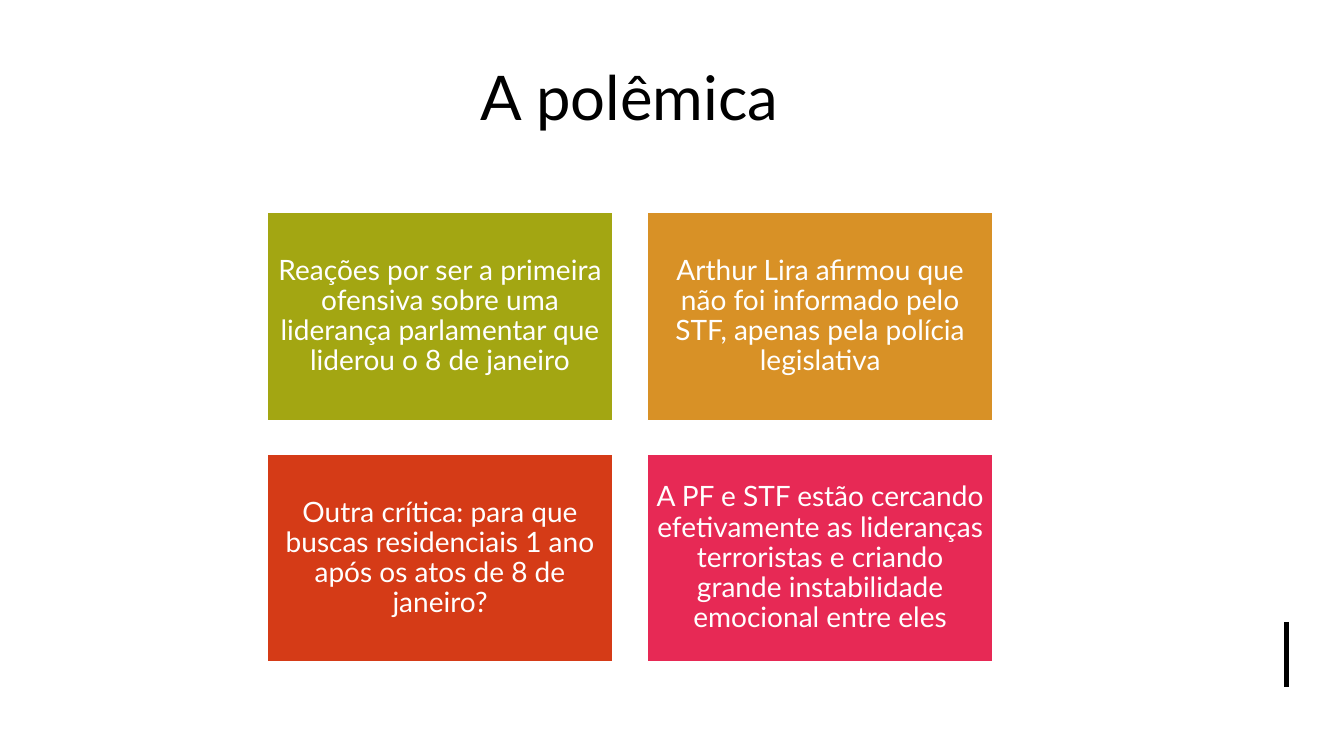
"""Builds the slide "A polêmica": a title above a two-by-two grid of tiles."""
from dataclasses import dataclass

from lxml import etree
from pptx import Presentation
from pptx import util as u
from pptx.dml.color import RGBColor
from pptx.enum import shapes, text
from pptx.oxml.ns import qn

EMU_PER_PX = 9144
SLIDE_SIZE = (1333, 750)
TITLE_BOX = (83, 32, 1083, 127)
GRID_LEFT, GRID_TOP = 265, 211
TILE_WIDTH, TILE_HEIGHT, GAP = 343, 206, 34
COLUMNS = 2


@dataclass(frozen=True)
class Theme:
    """Holds the colours and type sizes of the slide."""
    font: str = "Lato"
    title_size: int = 44
    tile_size: int = 20
    dark: str = "000000"
    light: str = "FFFFFF"
    tiles: tuple = ("A3A612", "D89126", "D53B17", "E72955")


THEME = Theme()
STATEMENTS = (
    "Reações por ser a primeira ofensiva sobre uma liderança parlamentar que liderou o 8 de janeiro",
    "Arthur Lira afirmou que não foi informado pelo STF, apenas pela polícia legislativa",
    "Outra crítica: para que buscas residenciais 1 ano após os atos de 8 de janeiro?",
    "A PF e STF estão cercando efetivamente as lideranças terroristas e criando "
    "grande instabilidade emocional entre eles",
)


def px(*lengths):
    """Turn lengths in px into a list of EMU lengths."""
    return [u.Emu(length * EMU_PER_PX) for length in lengths]


def rgb(colour):
    """Turn a hex string into a colour."""
    return RGBColor.from_string(colour)


def write_centred(shape, words, size, colour):
    """Write one paragraph in the middle of a shape and return it."""
    frame = shape.text_frame
    frame.word_wrap = True
    frame.vertical_anchor = text.MSO_ANCHOR.MIDDLE
    paragraph = frame.paragraphs[0]
    paragraph.text = words
    paragraph.alignment = text.PP_ALIGN.CENTER
    paragraph.font.name = THEME.font
    paragraph.font.size = u.Pt(size)
    paragraph.font.color.rgb = rgb(colour)
    return paragraph


def add_title(slide, words):
    """Add the slide title."""
    title = slide.shapes.add_textbox(*px(*TITLE_BOX))
    write_centred(title, words, THEME.title_size, THEME.dark)


def add_tile(slide, left, top, words, colour):
    """Add one coloured tile with its statement."""
    tile = slide.shapes.add_shape(
        shapes.MSO_SHAPE.RECTANGLE, *px(left, top, TILE_WIDTH, TILE_HEIGHT))
    tile.shadow.inherit = False
    tile.fill.solid()
    tile.fill.fore_color.rgb = rgb(colour)
    tile.line.color.rgb = rgb(THEME.light)
    tile.line.width = u.Pt(1)
    frame = tile.text_frame
    frame.margin_left, frame.margin_top, frame.margin_right, frame.margin_bottom = px(8, 8, 8, 8)
    paragraph = write_centred(tile, words, THEME.tile_size, THEME.light)
    paragraph.line_spacing = 0.9


def add_rule(slide, start_x, start_y, end_x, end_y):
    """Add a thick dark line."""
    rule = slide.shapes.add_connector(
        shapes.MSO_CONNECTOR.STRAIGHT, *px(start_x, start_y, end_x, end_y))
    rule.line.color.rgb = rgb(THEME.dark)
    rule.line.width = u.Pt(3)
    etree.SubElement(rule._element.spPr, qn("a:effectLst"))


def main():
    """Build the slide and save it."""
    presentation = Presentation()
    presentation.slide_width, presentation.slide_height = px(*SLIDE_SIZE)
    slide = presentation.slides.add_slide(presentation.slide_layouts[6])
    add_title(slide, "A polêmica")
    add_rule(slide, 1276, 617, 1276, 682)
    for index, (words, colour) in enumerate(zip(STATEMENTS, THEME.tiles)):
        row, column = divmod(index, COLUMNS)
        left = GRID_LEFT + column * (TILE_WIDTH + GAP)
        top = GRID_TOP + row * (TILE_HEIGHT + GAP)
        add_tile(slide, left, top, words, colour)
    presentation.save("out.pptx")


if __name__ == "__main__":
    main()
